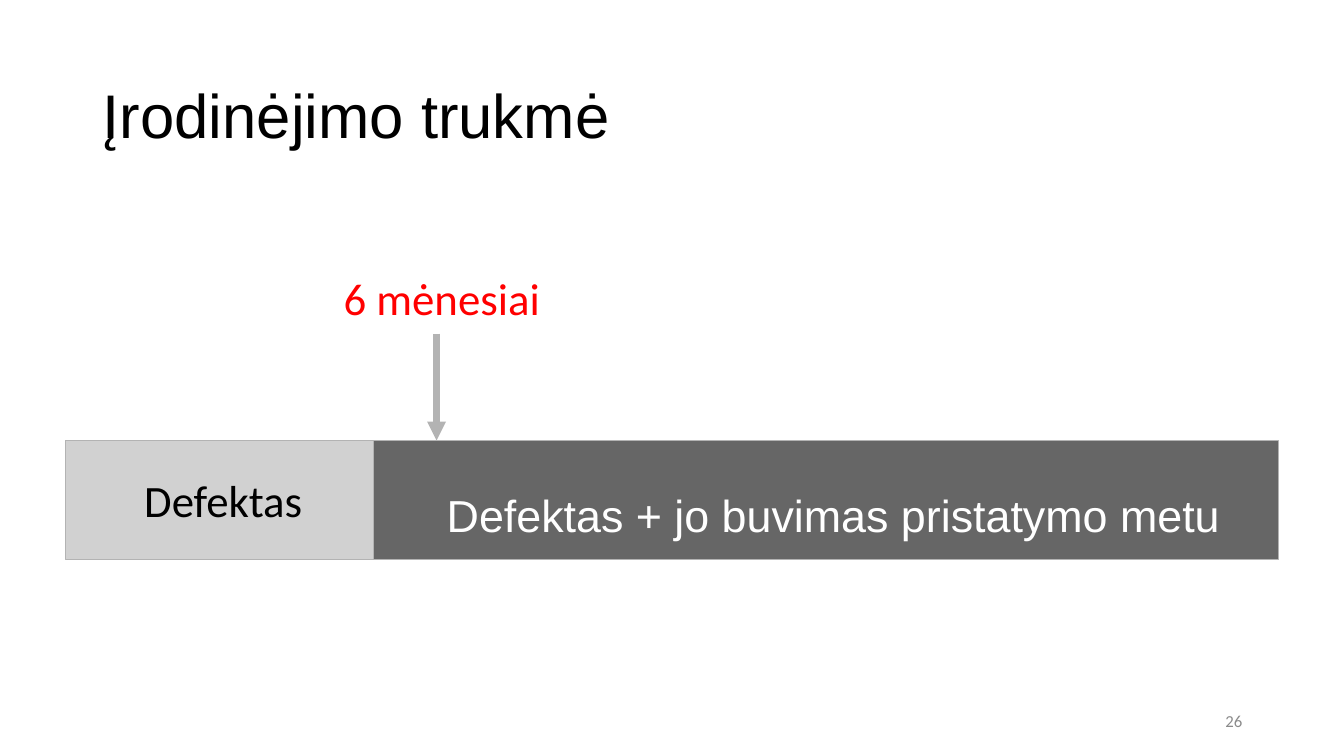
from lxml import etree
from pptx import Presentation
from pptx.dml.color import RGBColor
from pptx.enum import shapes, text
from pptx.oxml import ns
from pptx.util import Inches, Pt

BLACK = RGBColor(0x00, 0x00, 0x00)
WHITE = RGBColor(0xFF, 0xFF, 0xFF)
RED = RGBColor(0xFF, 0x00, 0x00)
LIGHT_GRAY = RGBColor(0xB3, 0xB3, 0xB3)
DARK_GRAY = RGBColor(0x66, 0x66, 0x66)
NUMBER_GRAY = RGBColor(0x8B, 0x8B, 0x8B)

BAR_TOP = 4.37
BAR_HEIGHT = 1.18


def write(shape, wording, size, font, color, align=text.PP_ALIGN.LEFT,
          anchor=text.MSO_ANCHOR.MIDDLE, wrap=True):
    frame = shape.text_frame
    frame.text = wording
    frame.word_wrap = wrap
    frame.vertical_anchor = anchor
    paragraph = frame.paragraphs[0]
    paragraph.alignment = align
    paragraph.font.size = Pt(size)
    paragraph.font.name = font
    paragraph.font.color.rgb = color
    return paragraph


def add_title(slide, wording):
    title = slide.shapes.title
    title.left, title.top = Inches(0.92), Inches(0.4)
    title.width, title.height = Inches(11.88), Inches(1.45)
    write(title, wording, 44, "Arial", BLACK)


def add_label(slide, left, top, width, height, wording, size, font, color, **layout):
    label = slide.shapes.add_textbox(
        Inches(left), Inches(top), Inches(width), Inches(height))
    return write(label, wording, size, font, color, **layout)


def add_period(slide, left, width, color, opacity=100):
    period = slide.shapes.add_shape(
        shapes.MSO_SHAPE.RECTANGLE,
        Inches(left), Inches(BAR_TOP), Inches(width), Inches(BAR_HEIGHT))
    period.shadow.inherit = False
    period.fill.solid()
    period.fill.fore_color.rgb = color
    period.line.color.rgb = LIGHT_GRAY
    period.line.width = Pt(0)
    if opacity < 100:
        fill_color = period.fill._xPr.find(ns.qn("a:solidFill"))[0]
        etree.SubElement(fill_color, ns.qn("a:alpha"), val=str(opacity * 1000))
    return period


def add_down_arrow(slide, x, top, bottom):
    arrow = slide.shapes.add_connector(
        shapes.MSO_CONNECTOR.STRAIGHT,
        Inches(x), Inches(top), Inches(x), Inches(bottom))
    arrow.line.color.rgb = LIGHT_GRAY
    arrow.line.width = Pt(4.5)
    etree.SubElement(arrow.line._get_or_add_ln(), ns.qn("a:tailEnd"), type="triangle")
    etree.SubElement(arrow._element.spPr, ns.qn("a:effectLst"))


def main():
    presentation = Presentation()
    presentation.slide_width = Inches(13.33)
    presentation.slide_height = Inches(7.5)
    slide = presentation.slides.add_slide(presentation.slide_layouts[5])

    add_title(slide, "Įrodinėjimo trukmė")
    add_label(slide, 9.42, 6.95, 3, 0.4, "26", 12, "Calibri", NUMBER_GRAY,
              align=text.PP_ALIGN.RIGHT)

    first_period = add_period(slide, 0.65, 3.13, LIGHT_GRAY, opacity=60)
    write(first_period, "Defektas", 32, "Calibri", BLACK,
          align=text.PP_ALIGN.CENTER, wrap=False)
    add_period(slide, 3.7, 8.98, DARK_GRAY)
    later_burden = add_label(
        slide, 3.7, 4.52, 9.14, 0.91, "Defektas + jo buvimas pristatymo metu",
        32, "Arial", WHITE, align=text.PP_ALIGN.CENTER)
    later_burden.line_spacing = 1.5

    add_label(slide, 3.31, 2.64, 2.5, 0.64, "6 mėnesiai", 32, "Calibri", RED,
              anchor=text.MSO_ANCHOR.TOP)
    add_down_arrow(slide, 4.33, 3.31, BAR_TOP)

    presentation.save("out.pptx")


if __name__ == "__main__":
    main()
